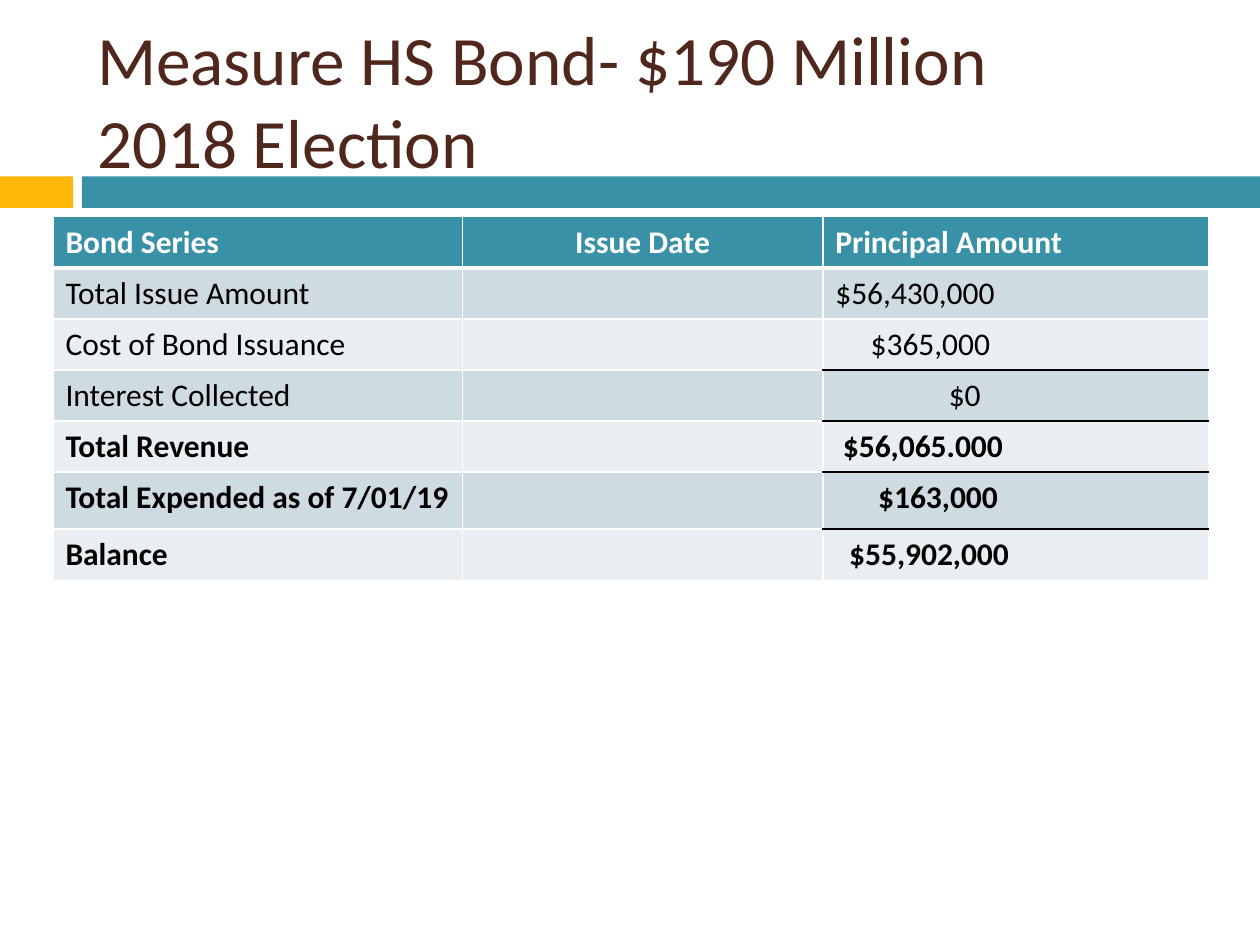
from lxml.etree import SubElement
from pptx import Presentation
from pptx.dml.color import RGBColor
from pptx.enum.shapes import MSO_SHAPE
from pptx.enum.text import MSO_ANCHOR, MSO_AUTO_SIZE, PP_ALIGN
from pptx.oxml.ns import qn
from pptx.util import Inches, Pt

FONT = "Calibri"
TEAL, GOLD, BROWN = "3891A7", "FEB80A", "4F271C"
WHITE, BLACK = "FFFFFF", "000000"
BANDS = ["E8EEF1", "CEDCE1"]

HEADINGS = ["Bond Series", "Issue Date", "Principal Amount"]
# Label, amount, indent of the amount in inches, bold
ENTRIES = [
    ("Total Issue Amount", "$56,430,000", 0, False),
    ("Cost of Bond Issuance", "$365,000", 0.28, False),
    ("Interest Collected", "$0", 0.9, False),
    ("Total Revenue", "$56,065.000", 0.06, True),
    ("Total Expended as of 7/01/19", "$163,000", 0.34, True),
    ("Balance", "$55,902,000", 0.11, True),
]
COLUMN_WIDTHS = [3.25, 2.86, 3.06]
ROW_HEIGHTS = [0.4] * 5 + [0.45, 0.41]
RULED_ROWS = range(2, 6)  # amounts with a black line below


def color(value):
    return RGBColor.from_string(value)


def format_text(paragraph, size, text_color, bold=False):
    for span in paragraph.runs:
        span.font.name = FONT
        span.font.size = Pt(size)
        span.font.bold = bold
        span.font.color.rgb = color(text_color)


def add_bar(page, left, width, fill):
    bar = page.shapes.add_shape(
        MSO_SHAPE.RECTANGLE, Inches(left), Inches(1.4), Inches(width), Inches(0.25))
    bar.shadow.inherit = False
    bar.fill.solid()
    bar.fill.fore_color.rgb = color(fill)
    bar.line.fill.background()


def set_title(page, text):
    box = page.shapes.title
    box.left, box.top = Inches(0.67), Inches(0.25)
    box.width, box.height = Inches(8.92), Inches(1.08)
    frame = box.text_frame
    frame.text = text
    frame.auto_size = MSO_AUTO_SIZE.NONE
    frame.vertical_anchor = MSO_ANCHOR.MIDDLE
    frame.paragraphs[0].alignment = PP_ALIGN.LEFT
    format_text(frame.paragraphs[0], 39.6, BROWN)


def set_border(cell, side, line_color, width=1):
    line = SubElement(cell._tc.get_or_add_tcPr(), qn(f"a:ln{side}"), w=str(Pt(width)))
    fill = SubElement(line, qn("a:solidFill"))
    SubElement(fill, qn("a:srgbClr"), val=line_color)


def style_cell(cell, row, column):
    # Borders come before the fill in the cell properties
    def rule(index):
        return BLACK if column == 2 and index in RULED_ROWS else WHITE

    set_border(cell, "L", WHITE)
    set_border(cell, "R", WHITE)
    set_border(cell, "T", rule(row - 1), 3 if row == 1 else 1)
    set_border(cell, "B", rule(row), 3 if row == 0 else 1)
    cell.fill.solid()
    cell.fill.fore_color.rgb = color(BANDS[row % 2] if row else TEAL)


def write_cell(cell, text, text_color, bold, indent=0):
    cell.text_frame.text = text
    cell.margin_left = Inches(0.1 + indent)
    format_text(cell.text_frame.paragraphs[0], 18, text_color, bold)


def add_bond_table(page):
    table = page.shapes.add_table(
        len(ROW_HEIGHTS), len(COLUMN_WIDTHS), Inches(0.42), Inches(1.72),
        Inches(sum(COLUMN_WIDTHS)), Inches(sum(ROW_HEIGHTS))).table
    for column, width in zip(table.columns, COLUMN_WIDTHS):
        column.width = Inches(width)
    for row, height in zip(table.rows, ROW_HEIGHTS):
        row.height = Inches(height)
    for row in range(len(ROW_HEIGHTS)):
        for column in range(len(COLUMN_WIDTHS)):
            style_cell(table.cell(row, column), row, column)

    for column, heading in enumerate(HEADINGS):
        write_cell(table.cell(0, column), heading, WHITE, True)
    table.cell(0, 1).text_frame.paragraphs[0].alignment = PP_ALIGN.CENTER
    for row, (label, amount, indent, bold) in enumerate(ENTRIES, start=1):
        write_cell(table.cell(row, 0), label, BLACK, bold)
        write_cell(table.cell(row, 2), amount, BLACK, bold, indent)


def main():
    deck = Presentation()
    deck.slide_width, deck.slide_height = Inches(10), Inches(7.5)
    page = deck.slides.add_slide(deck.slide_layouts[5])

    # Colour bars under the title
    add_bar(page, 0, 0.58, GOLD)
    add_bar(page, 0.65, 9.35, TEAL)

    set_title(page, "Measure HS Bond- $190 Million\v2018 Election")
    add_bond_table(page)
    deck.save("out.pptx")


if __name__ == "__main__":
    main()
